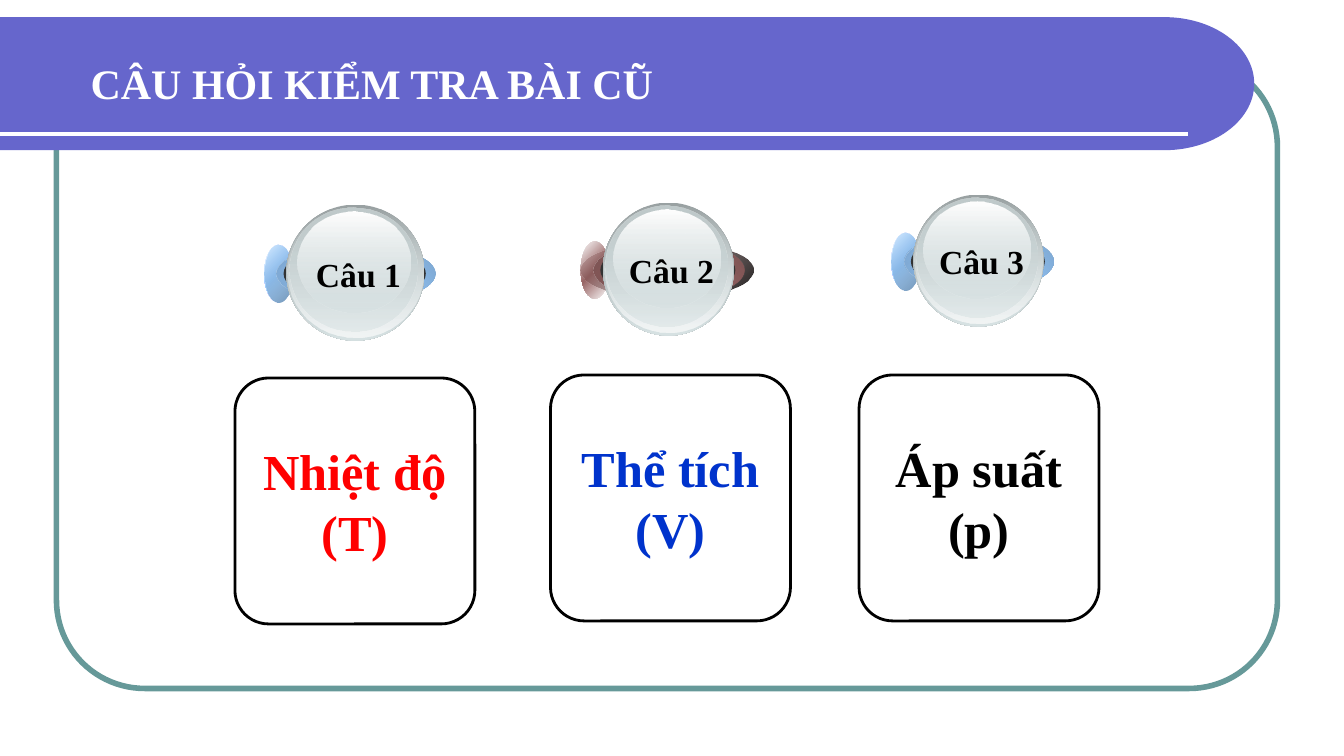
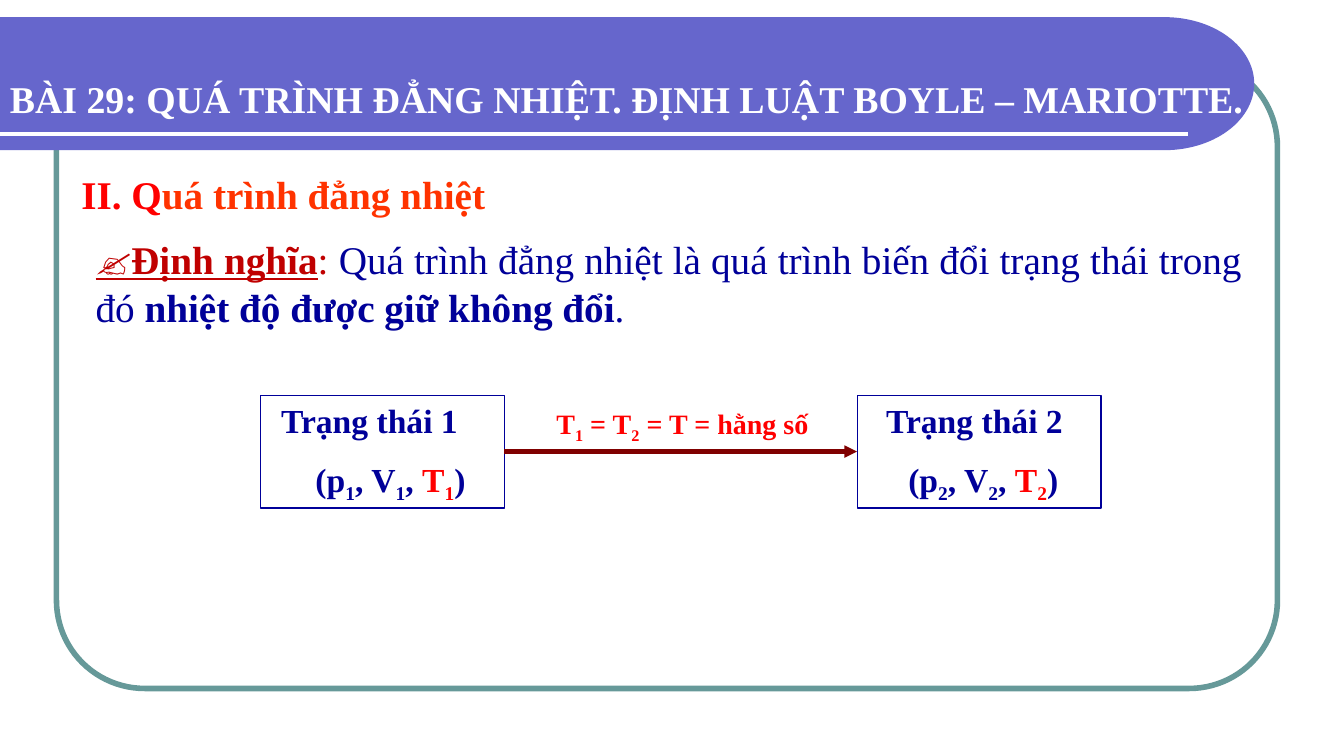
import math
from dataclasses import dataclass

import pptx
import pptx.dml.color
import pptx.enum.shapes
import pptx.enum.text
import pptx.oxml.ns
import pptx.util
from lxml import etree

Inches = pptx.util.Inches
Pt = pptx.util.Pt
SHAPE = pptx.enum.shapes.MSO_SHAPE
ALIGN = pptx.enum.text.PP_ALIGN
ANCHOR = pptx.enum.text.MSO_ANCHOR
qn = pptx.oxml.ns.qn

FONT = "Times New Roman"
COLORS = {
    "band": "6666CC", "frame": "669999", "white": "FFFFFF", "black": "000000",
    "red": "FF0000", "orange": "FF3300", "crimson": "C00000", "blue": "0033CC",
    "navy": "000099", "maroon": "800000", "core": "333333",
    "steel": "99A1A2", "silver": "D6E1E2", "pearl": "F2F5F5", "ash": "C1CBCC",
    "sky": "99CCFF", "sky ear": "6D92B6", "sky ring": "759CC3", "sky glow": "7EA7D1",
    "rose": "996666", "rose ring": "754E4E", "rose glow": "7E5454",
}


@dataclass
class Run:
    text: str
    color: str = None
    bold: bool = None
    underline: bool = None
    subscript: bool = False


@dataclass
class Tint:
    """Colours of the ears and rings behind a round button."""
    base: str
    ear_end: str
    ear_end_opacity: int
    ear_width: float
    ring: str
    glow: str


SKY = Tint("sky", "sky ear", 100, 0.28, "sky ring", "sky glow")
ROSE = Tint("rose", "black", 90, 1.71, "rose ring", "rose glow")


def rgb(name):
    return pptx.dml.color.RGBColor.from_string(COLORS[name])


class Deck:
    def __init__(self):
        self.presentation = pptx.Presentation()
        self.presentation.slide_width = Inches(13.33)
        self.presentation.slide_height = Inches(7.5)
        self.slide = None

    def new_slide(self, title, left, top, width, height, size):
        """Add a slide with the shared frame, band and title."""
        layout = self.presentation.slide_layouts[6]
        self.slide = self.presentation.slides.add_slide(layout)
        self.rounded(0.56, 0.58, 12.11, 6.25, None, "frame", 4)
        self.band()
        self.line(0, 1.33, 11.78, 1.33, "white", 3)
        self.text(left, top, width, height, [[Run(title)]], size, "white",
                  anchor=ANCHOR.MIDDLE)

    def band(self):
        center_x, center_y, radius_x, radius_y = 11.55, 0.83, 0.89, 0.66
        angles = [math.radians(degrees) for degrees in range(-90, 91, 3)]
        points = [(Inches(center_x + radius_x * math.cos(angle)),
                   Inches(center_y + radius_y * math.sin(angle))) for angle in angles]
        builder = self.slide.shapes.build_freeform(0, Inches(center_y - radius_y))
        builder.add_line_segments(points + [(0, Inches(center_y + radius_y))])
        self.style(builder.convert_to_shape(), "band")

    def style(self, shape, fill=None, line=None, line_width=1):
        shape.shadow.inherit = False
        if fill:
            shape.fill.solid()
            shape.fill.fore_color.rgb = rgb(fill)
        else:
            shape.fill.background()
        if line:
            shape.line.color.rgb = rgb(line)
            shape.line.width = Pt(line_width)
        else:
            shape.line.fill.background()

    def shape(self, kind, left, top, width, height, fill=None, line=None, line_width=1):
        shape = self.slide.shapes.add_shape(
            kind, Inches(left), Inches(top), Inches(width), Inches(height))
        self.style(shape, fill, line, line_width)
        return shape

    def rounded(self, left, top, width, height, fill, line, line_width):
        shape = self.shape(SHAPE.ROUNDED_RECTANGLE, left, top, width, height,
                           fill, line, line_width)
        shape.adjustments[0] = 0.14
        return shape

    def ellipse(self, left, top, width, height, stops, angle):
        """Draw an ellipse with gradient stops (position, colour, opacity), in percent."""
        shape = self.shape(SHAPE.OVAL, left, top, width, height)
        shape.fill.gradient()
        gradient = shape._element.spPr.find(qn("a:gradFill"))
        stop_list = gradient.find(qn("a:gsLst"))
        for stop in list(stop_list):
            stop_list.remove(stop)
        for position, name, opacity in stops:
            stop = etree.SubElement(stop_list, qn("a:gs"), pos=str(position * 1000))
            color = etree.SubElement(stop, qn("a:srgbClr"), val=COLORS[name])
            if opacity < 100:
                etree.SubElement(color, qn("a:alpha"), val=str(opacity * 1000))
        gradient.find(qn("a:lin")).set("ang", str(angle * 60000))

    def line(self, x1, y1, x2, y2, color, width, arrow=False):
        connector = self.slide.shapes.add_connector(
            pptx.enum.shapes.MSO_CONNECTOR.STRAIGHT,
            Inches(x1), Inches(y1), Inches(x2), Inches(y2))
        connector.line.color.rgb = rgb(color)
        connector.line.width = Pt(width)
        properties = connector._element.spPr
        if arrow:
            etree.SubElement(properties.find(qn("a:ln")), qn("a:tailEnd"),
                             type="triangle")
        etree.SubElement(properties, qn("a:effectLst"))
        return connector

    def join(self, first, second, color, width):
        """Draw an arrow from the right side of one box to the left side of another."""
        connector = self.line(0, 0, 1, 1, color, width, arrow=True)
        connector.begin_connect(first, 3)
        connector.end_connect(second, 1)

    def text(self, left, top, width, height, paragraphs, size, color, **options):
        box = self.slide.shapes.add_textbox(
            Inches(left), Inches(top), Inches(width), Inches(height))
        self.set_text(box, paragraphs, size, color, **options)

    def set_text(self, shape, paragraphs, size, color, bold=True, align=ALIGN.LEFT,
                 anchor=ANCHOR.TOP, indents=None):
        frame = shape.text_frame
        frame.word_wrap = True
        frame.vertical_anchor = anchor
        for index, runs in enumerate(paragraphs):
            paragraph = frame.add_paragraph() if index else frame.paragraphs[0]
            paragraph.alignment = align
            if index:
                paragraph.space_before = Pt(size * 0.55)
            if indents:
                paragraph._p.get_or_add_pPr().set("marL", str(Inches(indents[index])))
            font = paragraph.font
            font.name, font.size, font.bold = FONT, Pt(size), bold
            font.color.rgb = rgb(color)
            for item in runs:
                run = paragraph.add_run()
                run.text = item.text
                if item.color:
                    run.font.color.rgb = rgb(item.color)
                if item.bold is not None:
                    run.font.bold = item.bold
                if item.underline:
                    run.font.underline = True
                if item.subscript:
                    run._r.get_or_add_rPr().set("baseline", "-25000")

    def button(self, label, left, top, width, height, tint):
        """Draw a glossy disc with tinted ears; left to height bound the disc."""
        ear_height = 0.57
        ear_left = left - 0.22
        ear_top = top + (height - ear_height) / 2 + 0.01
        ring = (left - 0.07 * width, ear_top, 1.15 * width, ear_height)
        self.ellipse(ear_left, ear_top, 0.28, ear_height,
                     [(0, "white", 100), (50, tint.base, 100), (100, "white", 100)], 45)
        self.ellipse(ear_left, ear_top, tint.ear_width, ear_height,
                     [(0, tint.base, 32), (100, tint.ear_end, tint.ear_end_opacity)], 45)
        self.ellipse(*ring, [(0, tint.ring, 100), (50, tint.base, 100),
                             (100, tint.ring, 100)], 315)
        self.ellipse(*ring, [(0, tint.glow, 100), (100, tint.base, 0)], 45)
        self.shape(SHAPE.OVAL, left - 0.02 * width, ear_top, 1.03 * width, ear_height,
                   "core")
        # Each layer: offset and size as shares of the disc, then its two end colours.
        layers = [
            (0, 0, 1, 1, ("steel", 100), ("silver", 100)),
            (0.01, 0.01, 0.98, 0.97, ("silver", 0), ("pearl", 100)),
            (0.02, 0.02, 0.93, 0.91, ("ash", 100), ("silver", 48)),
            (0.08, 0.05, 0.82, 0.74, ("white", 100), ("silver", 38)),
        ]
        for x, y, across, down, start, end in layers:
            self.ellipse(left + x * width, top + y * height, across * width,
                         down * height, [(0, *start), (100, *end)], 90)
        self.text(left + width / 2 - 0.5, top + height / 2 - 0.24, 1.06, 0.51,
                  [[Run(label)]], 24, "black", align=ALIGN.CENTER)

    def card(self, label, left, top, color):
        shape = self.rounded(left, top, 2.38, 2.44, "white", "black", 2)
        self.set_text(shape, [[Run(label)]], 36, color, align=ALIGN.CENTER,
                      anchor=ANCHOR.MIDDLE)

    def state(self, number, left, indents):
        """Draw the box of one gas state with its three quantities."""
        shape = self.shape(SHAPE.RECTANGLE, left, 3.92, 2.42, 1.12, None, "navy", 0.75)
        quantities = [Run("(p"), Run(number, subscript=True),
                      Run(", V"), Run(number, subscript=True), Run(", "),
                      Run("T", "red"), Run(number, "red", subscript=True), Run(")")]
        self.set_text(shape, [[Run(f"Trạng thái {number}")], quantities], 24, "navy",
                      indents=indents)
        return shape


def questions_slide(deck):
    deck.new_slide("CÂU HỎI KIỂM TRA BÀI CŨ", 0.8, 0.32, 11.69, 1, 30)
    questions = [
        ((2.84, 2.03, 1.37, 1.35), SKY, "Nhiệt độ (T)", 2.33, 3.75, "red"),
        ((5.98, 2.01, 1.3, 1.32), ROSE, "Thể tích (V)", 5.46, 3.72, "blue"),
        ((9.06, 1.93, 1.29, 1.31), SKY, "Áp suất (p)", 8.52, 3.72, "black"),
    ]
    for number, (disc, tint, label, left, top, color) in enumerate(questions, 1):
        deck.button(f"Câu {number}", *disc, tint)
        deck.card(label, left, top, color)


def process_slide(deck):
    deck.new_slide("BÀI 29: QUÁ TRÌNH ĐẲNG NHIỆT. ĐỊNH LUẬT BOYLE – MARIOTTE.",
                   0, 0.54, 13.33, 0.87, 27)
    deck.text(0.71, 1.64, 9, 0.57,
              [[Run("II. Q"), Run("uá trình đẳng nhiệt", "orange")]], 28, "red")
    definition = [
        Run("✍Định nghĩa", "crimson", bold=True, underline=True),
        Run(": ", "crimson"),
        Run("Quá trình đẳng nhiệt là quá trình biến đổi trạng thái trong đó "),
        Run("nhiệt độ được giữ không đổi", bold=True),
        Run("."),
    ]
    deck.text(0.85, 2.29, 11.57, 1.04, [definition], 28, "navy", bold=False,
              align=ALIGN.JUSTIFY)
    first = deck.state("1", 2.58, (0.11, 0.45))
    second = deck.state("2", 8.5, (0.19, 0.41))
    deck.join(first, second, "maroon", 3)
    condition = [Run("T"), Run("1", subscript=True), Run(" = T"),
                 Run("2", subscript=True), Run(" = T = hằng số")]
    deck.text(5.42, 3.98, 2.83, 0.43, [condition], 20, "red")


def main():
    deck = Deck()
    questions_slide(deck)
    process_slide(deck)
    deck.presentation.save("out.pptx")


if __name__ == "__main__":
    main()
